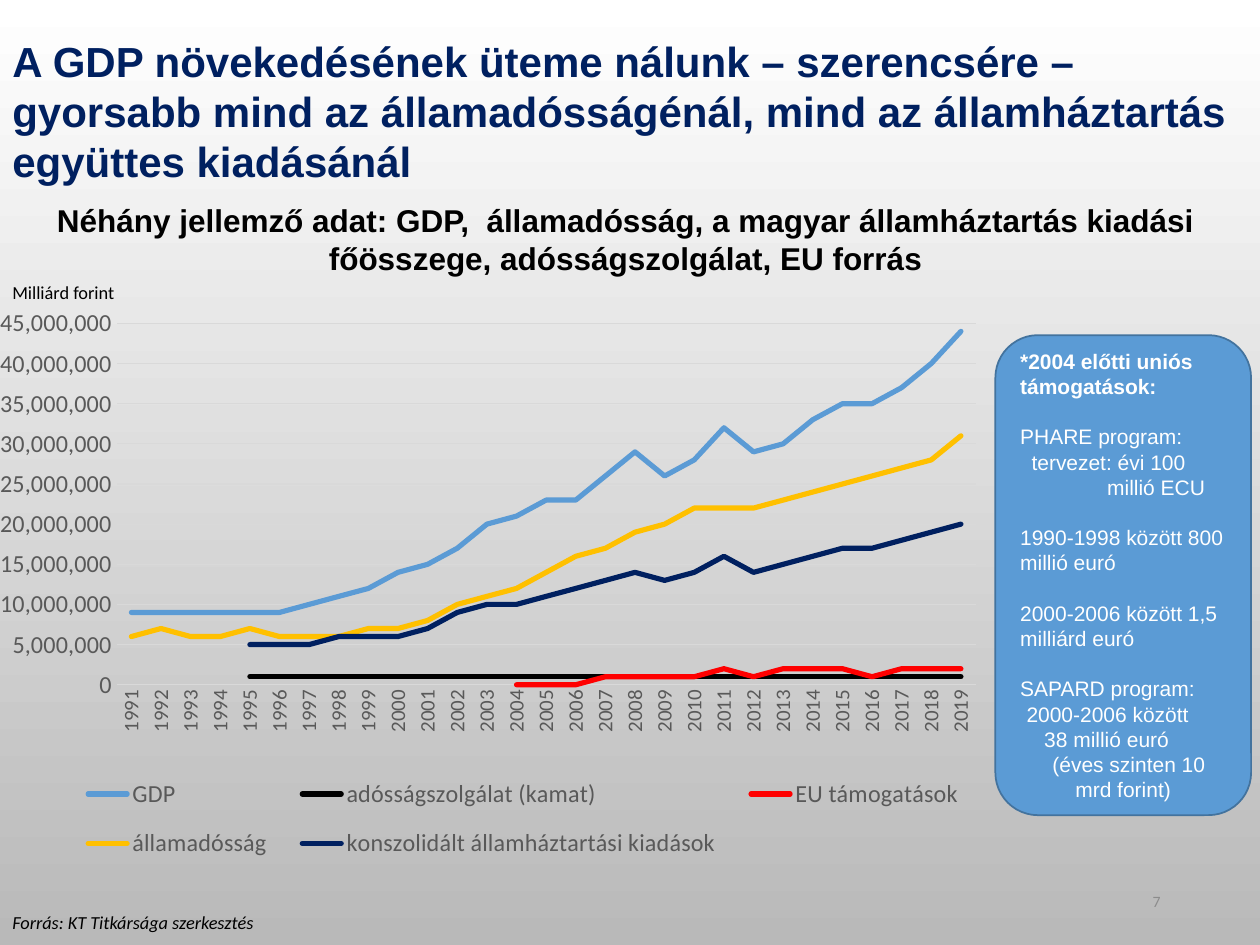
from lxml import etree
from pptx import Presentation
from pptx.chart.data import CategoryChartData
from pptx.dml.color import RGBColor
from pptx.enum import chart as ch, shapes, text
from pptx.oxml.ns import qn
from pptx.util import Inches, Pt

NAVY, BLUE, GREY, GRID = "002060", "5B9BD5", "595959", "D9D9D9"

TITLE = ("A GDP növekedésének üteme nálunk – szerencsére – gyorsabb mind az "
         "államadósságénál, mind az államháztartás együttes kiadásánál")
SUBTITLE = ("Néhány jellemző adat: GDP,  államadósság, a magyar államháztartás "
            "kiadási főösszege, adósságszolgálat, EU forrás")

# Text and paragraph format of the side note
GAP = 14.4
NOTE = [
    ("*2004 előtti uniós támogatások:", dict(bold=True)),
    ("PHARE program:", dict(before=GAP)),
    ("tervezet: évi 100", dict(indent=0.09)),
    ("millió ECU", dict(indent=0.69)),
    ("1990-1998 között 800 millió euró", dict(before=GAP)),
    ("2000-2006 között 1,5 milliárd euró", dict(before=GAP)),
    ("SAPARD program:", dict(before=GAP)),
    ("2000-2006 között", dict(indent=0.05)),
    ("38 millió euró", dict(indent=0.19)),
    ("(éves szinten 10 mrd forint)", dict(align="CENTER", first=0.09)),
]

YEARS = range(1991, 2020)
# Name, colour, values in millions; every series runs to the last year
SERIES = [
    ("GDP", BLUE,
     [9, 9, 9, 9, 9, 9, 10, 11, 12, 14, 15, 17, 20, 21, 23,
      23, 26, 29, 26, 28, 32, 29, 30, 33, 35, 35, 37, 40, 44]),
    ("adósságszolgálat (kamat)", "000000", [1] * 25),
    ("EU támogatások", "FF0000",
     [0, 0, 0, 1, 1, 1, 1, 2, 1, 2, 2, 2, 1, 2, 2, 2]),
    ("államadósság", "FFC000",
     [6, 7, 6, 6, 7, 6, 6, 6, 7, 7, 8, 10, 11, 12, 14, 16,
      17, 19, 20, 22, 22, 22, 23, 24, 25, 26, 27, 28, 31]),
    ("konszolidált államháztartási kiadások", NAVY,
     [5, 5, 5, 6, 6, 6, 7, 9, 10, 10, 11, 12, 13, 14, 13,
      14, 16, 14, 15, 16, 17, 17, 18, 19, 20]),
]
# Shares of the chart's width and height
PLOT = dict(x=0.102, y=0.04, w=0.878, h=0.613)
LEGEND = dict(x=0.045, y=0.78, w=0.945, h=0.2)


def rgb(value):
    return RGBColor.from_string(value)


def set_font(font, size, color, name="Calibri", bold=False, italic=False):
    font.size, font.name, font.bold, font.italic = Pt(size), name, bold, italic
    font.color.rgb = rgb(color)


def set_line(line, color, width):
    line.color.rgb = rgb(color)
    line.width = Pt(width)


def add_text(tf, content, size, color="000000", align="LEFT", before=0,
             indent=0, first=0, **font):
    """Add a paragraph, using the empty first one if the frame is new."""
    p = tf.paragraphs[0] if not tf.text else tf.add_paragraph()
    p.alignment = getattr(text.PP_ALIGN, align)
    p.space_before = Pt(before)
    pPr = p._p.get_or_add_pPr()
    pPr.set("marL", str(Inches(indent)))
    pPr.set("indent", str(Inches(first)))
    r = p.add_run()
    r.text = content
    set_font(r.font, size, color, **font)


def add_box(slide, x, y, w, h, grow=True):
    tf = slide.shapes.add_textbox(*map(Inches, (x, y, w, h))).text_frame
    tf.word_wrap = True
    if grow:
        tf.auto_size = text.MSO_AUTO_SIZE.SHAPE_TO_FIT_TEXT
    else:
        tf.vertical_anchor = text.MSO_ANCHOR.MIDDLE
    return tf


def set_layout(parent, index, **values):
    """Place the plot area or the legend by hand."""
    for old in parent.findall(qn("c:layout")):
        parent.remove(old)
    layout = etree.Element(qn("c:layout"))
    manual = etree.SubElement(layout, qn("c:manualLayout"))
    for tag, value in values.items():
        etree.SubElement(manual, qn("c:" + tag)).set("val", str(value))
    parent.insert(index, layout)


def add_line_chart(slide):
    data = CategoryChartData(number_format="#,##0")
    data.categories = [str(year) for year in YEARS]
    for name, _, values in SERIES:
        missing = [None] * (len(YEARS) - len(values))
        data.add_series(name, missing + [v * 1_000_000 for v in values])
    chart = slide.shapes.add_chart(ch.XL_CHART_TYPE.LINE, *map(Inches, (0, 2.38, 7.9, 4.68)),
                                   data).chart
    chart.has_title = False
    set_font(chart.font, 14, "000000")
    chart.plots[0].vary_by_categories = False
    for s, (_, color, _) in zip(chart.plots[0].series, SERIES):
        s.smooth = False
        s.marker.style = ch.XL_MARKER_STYLE.NONE
        set_line(s.format.line, color, 3)
        ln = s._element.find(qn("c:spPr")).find(qn("a:ln"))
        ln.set("cap", "rnd")
        etree.SubElement(ln, qn("a:round"))

    years, amounts = chart.category_axis, chart.value_axis
    for axis, size in ((years, 12), (amounts, 14)):
        axis.major_tick_mark = axis.minor_tick_mark = ch.XL_TICK_MARK.NONE
        set_font(axis.tick_labels.font, size, GREY)
    set_line(years.format.line, GRID, 0.75)
    years._element.find(qn("c:txPr")).find(qn("a:bodyPr")).set("rot", "-5400000")
    amounts.minimum_scale, amounts.maximum_scale = 0, 45_000_000
    amounts.major_unit = 5_000_000
    amounts.format.line.fill.background()
    amounts.has_major_gridlines = True
    set_line(amounts.major_gridlines.format.line, GRID, 0.75)
    amounts.tick_labels.number_format = "#,##0"
    amounts.tick_labels.number_format_is_linked = False

    chart.has_legend = True
    legend = chart.legend
    legend.position = ch.XL_LEGEND_POSITION.BOTTOM
    legend.include_in_layout = False
    set_font(legend.font, 14, GREY)
    edges = dict(xMode="edge", yMode="edge")
    set_layout(chart._chartSpace.find(".//" + qn("c:plotArea")), 0,
               layoutTarget="inner", **edges, **PLOT)
    set_layout(legend._element, 1, **edges, **LEGEND)


def add_note(slide):
    sp = slide.shapes.add_shape(shapes.MSO_SHAPE.ROUNDED_RECTANGLE,
                                *map(Inches, (7.9, 2.66, 2.03, 3.81)))
    sp.shadow.inherit = False
    sp.fill.solid()
    sp.fill.fore_color.rgb = rgb(BLUE)
    set_line(sp.line, "43739E", 1)
    tf = sp.text_frame
    tf.word_wrap = True
    tf.vertical_anchor = text.MSO_ANCHOR.MIDDLE
    for content, style in NOTE:
        add_text(tf, content, 12, "FFFFFF", name="Arial", **style)


def main():
    prs = Presentation()
    prs.slide_width, prs.slide_height = Inches(10), Inches(7.5)
    slide = prs.slides.add_slide(prs.slide_layouts[6])
    fill = slide.background.fill
    fill.gradient()
    fill.gradient_angle = 270
    for stop, color, position in zip(fill.gradient_stops, ("FFFFFF", "B9B9B9"), (0, 1)):
        stop.color.rgb = rgb(color)
        stop.position = position

    heading = add_box(slide, 0, 0.23, 9.93, 2.04)
    add_text(heading, TITLE, 24, NAVY, name="Arial", bold=True)
    add_text(heading, SUBTITLE, 18, align="CENTER", before=8.4, name="Arial", bold=True)
    add_text(add_box(slide, 0, 2.18, 3.53, 0.28), "Milliárd forint", 10.5)
    add_note(slide)
    add_text(add_box(slide, 0, 7.18, 3.89, 0.28), "Forrás: KT Titkársága szerkesztés",
             10.5, italic=True)
    add_text(add_box(slide, 7.06, 6.95, 2.25, 0.4, grow=False), "7", 9, "8C8C8C",
             align="RIGHT")
    add_line_chart(slide)
    prs.save("out.pptx")


if __name__ == "__main__":
    main()
